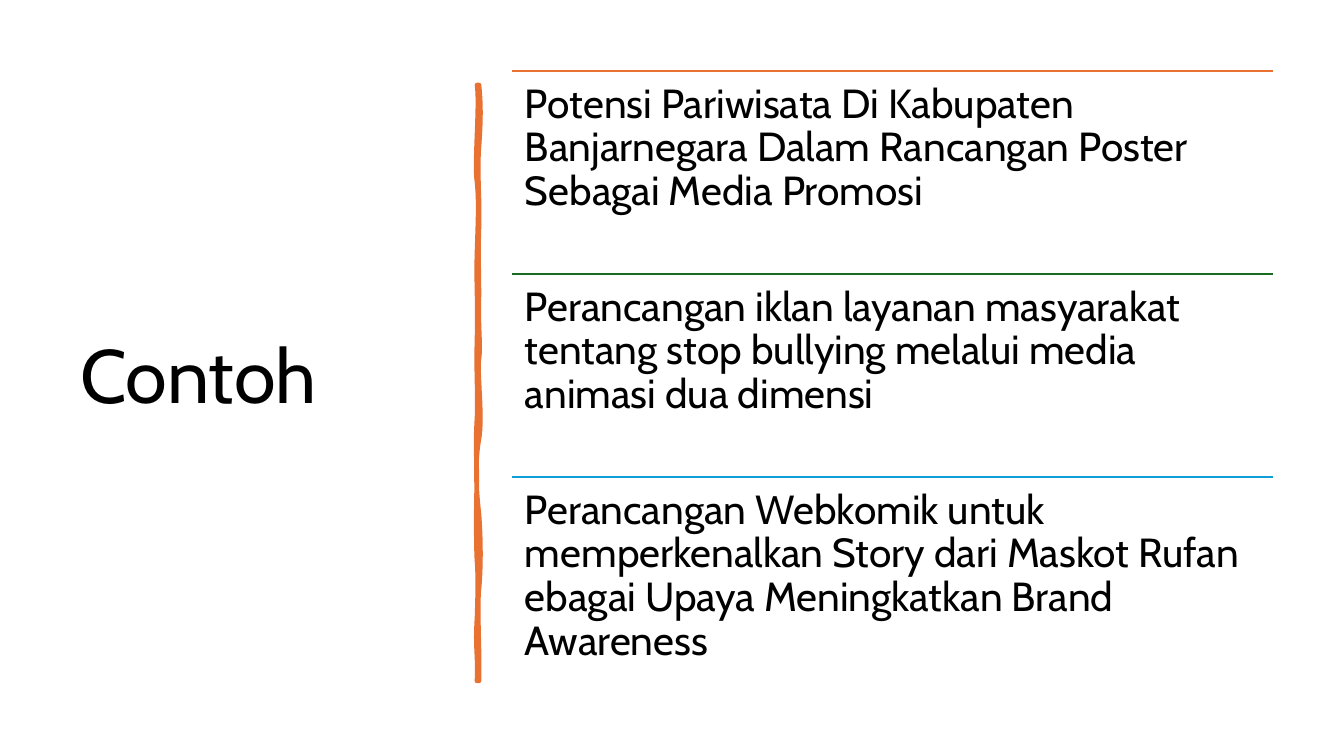
from lxml import etree
from pptx import Presentation, util as u
from pptx.dml.color import RGBColor
from pptx.enum import shapes, text
from pptx.oxml import ns

BLACK = RGBColor(0x00, 0x00, 0x00)
ORANGE = RGBColor(0xE9, 0x71, 0x32)
GREEN = RGBColor(0x19, 0x6B, 0x24)
BLUE = RGBColor(0x0F, 0x9E, 0xD5)
FONT = "Cabin"


def px(value):
    return u.Emu(round(value * 12192000 / 1344))


def write(frame, words, size, anchor):
    frame.word_wrap = True
    frame.auto_size = text.MSO_AUTO_SIZE.NONE
    frame.vertical_anchor = anchor
    paragraph = frame.paragraphs[0]
    paragraph.alignment = text.PP_ALIGN.LEFT
    paragraph.line_spacing = 0.9
    run = paragraph.add_run()
    run.text = words
    run.font.name = FONT
    run.font.size = u.Pt(size)
    run.font.color.rgb = BLACK


presentation = Presentation()
presentation.slide_width, presentation.slide_height = px(1344), px(756)
slide = presentation.slides.add_slide(presentation.slide_layouts[5])

# Title
title = slide.shapes.title
title.left, title.top, title.width, title.height = px(70), px(71), px(377), px(616)
write(title.text_frame, "Contoh", 54, text.MSO_ANCHOR.MIDDLE)

# Hand-drawn divider: each row is one curve, two control points and an end point
divider_points = [
    # Right edge, downwards
    (481, 103), (481, 120), (479, 147),
    (477, 174), (480, 197), (479, 228),
    (478, 259), (479, 264), (479, 296),
    (478, 328), (481, 345), (479, 359),
    (477, 373), (483, 417), (479, 439),
    (475, 461), (476, 488), (479, 514),
    (481, 540), (481, 569), (479, 589),
    (477, 608), (480, 655), (479, 681),
    # Left edge, upwards
    (478, 681), (477, 681), (477, 681),
    (478, 651), (475, 649), (477, 618),
    (478, 588), (478, 575), (477, 561),
    (476, 548), (476, 499), (477, 481),
    (477, 463), (475, 449), (477, 418),
    (478, 389), (476, 376), (477, 338),
    (478, 300), (476, 283), (477, 252),
    (478, 220), (479, 202), (477, 182),
    (474, 164), (480, 105), (477, 85),
    # Top edge
    (478, 85), (478, 85), (479, 85),
]
builder = slide.shapes.build_freeform(px(479), px(85))
builder.add_line_segments([(px(x), px(y)) for x, y in divider_points], close=True)
divider = builder.convert_to_shape()
divider.shadow.inherit = False
divider.fill.solid()
divider.fill.fore_color.rgb = ORANGE
divider.line.color.rgb = ORANGE
divider.line.width = u.Pt(3.25)
etree.SubElement(divider.element.spPr.find(ns.qn("a:ln")), ns.qn("a:round"))

# Join every three divider points into one curve
segments = list(divider.element.spPr.iter(ns.qn("a:lnTo")))[:len(divider_points)]
for index in range(0, len(segments), 3):
    curve = etree.Element(ns.qn("a:cubicBezTo"))
    segments[index].addprevious(curve)
    for segment in segments[index:index + 3]:
        curve.append(segment[0])
        segment.getparent().remove(segment)

# Example titles, each under a coloured rule
examples = [
    (ORANGE, "Potensi Pariwisata Di Kabupaten Banjarnegara Dalam Rancangan Poster Sebagai Media Promosi"),
    (GREEN, "Perancangan iklan layanan masyarakat tentang stop bullying melalui media animasi dua dimensi"),
    (BLUE, "Perancangan Webkomik untuk memperkenalkan Story dari Maskot Rufan ebagai Upaya Meningkatkan Brand Awareness"),
]
left, first_top, width, row_height = 512, 71, 761, 203
for index, (color, words) in enumerate(examples):
    top = first_top + index * row_height
    rule = slide.shapes.add_connector(
        shapes.MSO_CONNECTOR.STRAIGHT, px(left), px(top), px(left + width), px(top))
    rule.line.color.rgb = color
    rule.line.width = u.Pt(1.5)
    etree.SubElement(rule.element.spPr, ns.qn("a:effectLst"))

    box = slide.shapes.add_textbox(px(left), px(top), px(width), px(row_height))
    frame = box.text_frame
    frame.margin_left = frame.margin_right = px(13)
    frame.margin_top = frame.margin_bottom = px(12)
    write(frame, words, 29, text.MSO_ANCHOR.TOP)

presentation.save("out.pptx")
